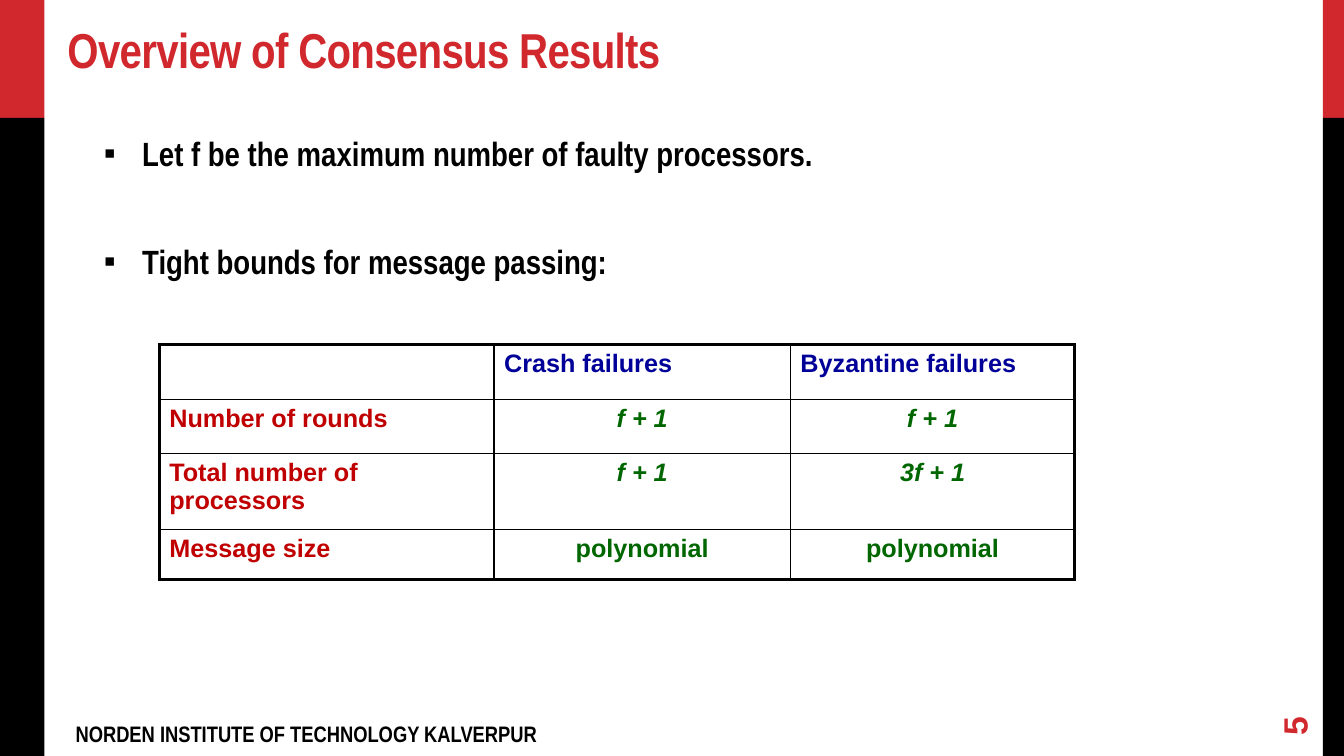
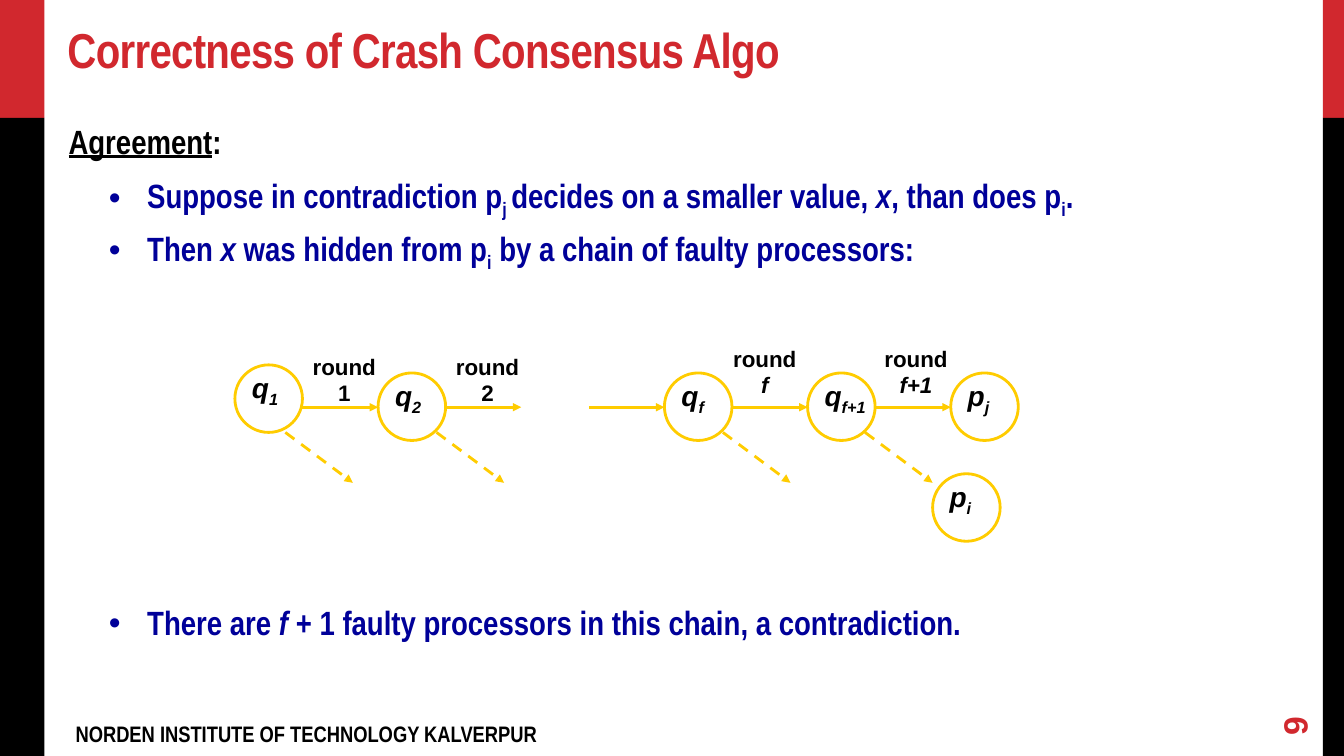
from lxml import etree
from pptx import Presentation
from pptx.dml.color import RGBColor
from pptx.enum.dml import MSO_LINE
from pptx.enum.shapes import MSO_CONNECTOR, MSO_SHAPE
from pptx.enum.text import MSO_ANCHOR, PP_ALIGN
from pptx.oxml.ns import qn
from pptx.util import Inches, Pt

RECTANGLE = MSO_SHAPE.RECTANGLE
OVAL = MSO_SHAPE.OVAL
STRAIGHT = MSO_CONNECTOR.STRAIGHT
DASH = MSO_LINE.DASH
TOP, MIDDLE, BOTTOM = MSO_ANCHOR.TOP, MSO_ANCHOR.MIDDLE, MSO_ANCHOR.BOTTOM
LEFT, CENTER = PP_ALIGN.LEFT, PP_ALIGN.CENTER

RED, BLACK, WHITE = "D1282E", "000000", "FFFFFF"
NAVY, CRIMSON, GREEN, GOLD = "000099", "C00000", "006600", "FFCC00"

FOOTER = "NORDEN INSTITUTE OF TECHNOLOGY KALVERPUR"
WIDE_INSETS = (0.11, 0.06)
PLAIN_INSETS = (0.1, 0.05)

TITLE = {"name": "Arial Narrow", "size": Pt(35), "bold": True, "color": RED, "spc": -50}
BODY = {"name": "Arial Narrow", "size": Pt(24), "bold": True, "color": BLACK}
POINT = {**BODY, "color": NAVY}
FOOT = {**BODY, "size": Pt(16)}
NUMBER = {"name": "Arial", "size": Pt(24), "bold": True, "color": RED}
CELL = {"name": "Arial", "size": Pt(18), "bold": True}
NODE = {"name": "Arial", "size": Pt(20), "bold": True, "italic": True, "color": BLACK}
ROUND = {"name": "Arial", "size": Pt(16), "bold": True, "color": BLACK}
ITALIC = {"italic": True}
SUB = {"baseline": -25000}

CIRCLE = 0.67
STEP = 1.42
CHAIN_LEFT = 2.33
CHAIN_TOP = 3.7
ARROW_Y = 4.04


def rgb(color):
    return RGBColor.from_string(color)


def add_child(parent, tag, **attributes):
    return etree.SubElement(parent, qn(tag), attributes)


def add_span(para, text, style):
    span = para.add_run()
    span.text = text
    for name, value in style.items():
        if name == "color":
            span.font.color.rgb = rgb(value)
        elif name in ("spc", "baseline"):
            span._r.get_or_add_rPr().set(name, str(value))
        else:
            setattr(span.font, name, value)


def fill_para(para, spans, style, align=LEFT, before=0, after=0):
    formats = {"alignment": align, "space_before": Pt(before), "space_after": Pt(after)}
    for name, value in formats.items():
        setattr(para, name, value)
    for text, changes in spans:
        add_span(para, text, {**style, **changes})


def add_bullet(para, symbol, color, margin):
    properties = para._p.get_or_add_pPr()
    properties.set("marL", str(Inches(margin)))
    properties.set("indent", str(Inches(-0.38)))
    add_child(add_child(properties, "a:buClr"), "a:srgbClr", val=color)
    add_child(properties, "a:buFont", typeface="Arial")
    add_child(properties, "a:buChar", char=symbol)


def add_box(page, at, insets=PLAIN_INSETS, anchor=TOP, wrap=True):
    box = page.shapes.add_textbox(*map(Inches, at))
    across, down = map(Inches, insets)
    formats = {
        "margin_left": across, "margin_right": across,
        "margin_top": down, "margin_bottom": down,
        "vertical_anchor": anchor, "word_wrap": wrap,
    }
    for name, value in formats.items():
        setattr(box.text_frame, name, value)
    return box


def add_label(page, at, text, style, **options):
    box = add_box(page, at, **options)
    fill_para(box.text_frame.paragraphs[0], [(text, {})], style)
    return box


def add_body(page, at, items):
    frame = add_box(page, at, WIDE_INSETS).text_frame
    for index, (spans, style, before, after, bullet) in enumerate(items):
        para = frame.add_paragraph() if index else frame.paragraphs[0]
        fill_para(para, spans, style, before=before, after=after)
        if bullet:
            add_bullet(para, *bullet)


def add_band(page, left, top, width, height, color):
    band = page.shapes.add_shape(RECTANGLE, *map(Inches, (left, top, width, height)))
    band.shadow.inherit = False
    band.fill.solid()
    band.fill.fore_color.rgb = rgb(color)
    band.line.fill.background()


def add_page(deck, title, number):
    page = deck.slides.add_slide(deck.slide_layouts[6])
    for left, width in ((13.12, 0.21), (0, 0.44)):
        add_band(page, left, 0, width, 1.17, RED)
        add_band(page, left, 1.17, width, 6.33, BLACK)
    add_label(page, (0.56, 0.17, 12.44, 0.67), title, TITLE,
              insets=WIDE_INSETS, anchor=BOTTOM)
    add_label(page, (0.64, 7.08, 8.11, 0.33), FOOTER, FOOT, insets=WIDE_INSETS)
    box = add_label(page, (12.45, 6.86, 0.77, 0.33), number, NUMBER,
                    insets=WIDE_INSETS, anchor=MIDDLE)
    box.rotation = 270
    return page


def set_borders(cell, outer_sides):
    properties = cell._tc.get_or_add_tcPr()
    for side in "LRTB":
        width = Pt(2.25 if side in outer_sides else 1)
        line = add_child(properties, f"a:ln{side}", w=str(width))
        add_child(add_child(line, "a:solidFill"), "a:srgbClr", val=BLACK)


def add_bounds_table(page, at, rows, widths, heights):
    frame = page.shapes.add_table(len(rows), len(widths), *map(Inches, at))
    table = frame.table
    table.first_row = table.horz_banding = False
    for column, width in zip(table.columns, widths):
        column.width = Inches(width)
    for row, height in zip(table.rows, heights):
        row.height = Inches(height)
    last_row, last_column = len(rows) - 1, len(widths) - 1
    for i, texts in enumerate(rows):
        for j, text in enumerate(texts):
            cell = table.cell(i, j)
            edges = {"L": j == 0, "R": j == last_column, "T": i == 0, "B": i == last_row}
            set_borders(cell, [side for side, outer in edges.items() if outer])
            cell.fill.solid()
            cell.fill.fore_color.rgb = rgb(WHITE)
            color = NAVY if i == 0 else CRIMSON if j == 0 else GREEN
            style = {**CELL, "color": color, "italic": "+" in text}
            align = CENTER if i and j else LEFT
            if text:
                fill_para(cell.text_frame.paragraphs[0], [(text, {})], style, align)


def add_node(page, left, top, letter, index):
    circle = page.shapes.add_shape(OVAL, *map(Inches, (left, top, CIRCLE, CIRCLE)))
    circle.shadow.inherit = False
    circle.fill.background()
    circle.line.color.rgb = rgb(GOLD)
    circle.line.width = Pt(2)
    box = add_box(page, (left + 0.07, top + 0.01, 0.8, 0.44))
    fill_para(box.text_frame.paragraphs[0], [(letter, {}), (index, SUB)], NODE)


def add_arrow(page, start, end, dashed=False):
    arrow = page.shapes.add_connector(STRAIGHT, *map(Inches, (*start, *end)))
    arrow.line.color.rgb = rgb(GOLD)
    arrow.line.width = Pt(2)
    if dashed:
        arrow.line.dash_style = DASH
    add_child(arrow.line._get_or_add_ln(), "a:tailEnd", type="triangle")
    add_child(arrow._element.spPr, "a:effectLst")


def add_round(page, left, top, name, changes):
    frame = add_box(page, (left, top, 0.83, 0.64), wrap=False).text_frame
    fill_para(frame.paragraphs[0], [("round", {})], ROUND, CENTER)
    fill_para(frame.add_paragraph(), [(name, changes)], ROUND, CENTER)


def add_chain(page):
    nodes = [(0, "q", "1"), (1, "q", "2"), (3, "q", "f"), (4, "q", "f+1"), (5, "p", "j")]
    for slot, letter, index in nodes:
        top = CHAIN_TOP if slot else 3.62
        add_node(page, CHAIN_LEFT + slot * STEP, top, letter, index)
    add_node(page, 9.25, 4.7, "p", "i")
    for slot in range(5):
        left = CHAIN_LEFT + CIRCLE + slot * STEP
        add_arrow(page, (left, ARROW_Y), (left + 0.75, ARROW_Y))
    for left in (2.83, 4.33, 7.17, 8.58):
        add_arrow(page, (left, 4.29), (left + 0.67, 4.79), dashed=True)
    rounds = [(3, 3.45, "1", {}), (4.42, 3.45, "2", {}),
              (7.17, 3.37, "f", ITALIC), (8.67, 3.37, "f+1", ITALIC)]
    for left, top, name, changes in rounds:
        add_round(page, left, top, name, changes)


def build_overview(deck):
    page = add_page(deck, "Overview of Consensus Results", "5")
    square = ("▪", BLACK, 0.38)
    add_body(page, (0.92, 1.26, 9.92, 2), [
        ([("Let f be the maximum number of faulty processors.", {})], BODY, 0, 4.9, square),
        ([("Tight bounds for message passing:", {})], BODY, 43.4, 4.9, square),
    ])
    rows = [
        ("", "Crash failures", "Byzantine failures"),
        ("Number of rounds", "f + 1", "f + 1"),
        ("Total number of processors", "f + 1", "3f + 1"),
        ("Message size", "polynomial", "polynomial"),
    ]
    add_bounds_table(page, (1.58, 3.42, 9.08, 2.33), rows,
                     (3.32, 2.94, 2.82), (0.54, 0.54, 0.75, 0.5))


def build_correctness(deck):
    page = add_page(deck, "Correctness of Crash Consensus Algo", "9")
    dot = ("•", NAVY, 0.78)
    suppose = [("Suppose in contradiction p", {}), ("j ", SUB),
               ("decides on a smaller value, ", {}), ("x", ITALIC),
               (", than does p", {}), ("i", SUB), (".", {})]
    hidden = [("Then ", {}), ("x", ITALIC), (" was hidden from p", {}), ("i", SUB),
              (" by a chain of faulty processors:", {})]
    contradiction = [("There are ", {}), ("f ", ITALIC),
                     ("+ 1 faulty processors in this chain, a contradiction.", {})]
    add_body(page, (0.57, 1.14, 12.22, 5.53), [
        ([("Agreement", {"underline": True}), (":", {})], BODY, 0, 4.9, None),
        (suppose, POINT, 4.8, 0, dot),
        (hidden, POINT, 4.8, 0, dot),
        (contradiction, POINT, 235, 0, dot),
    ])
    add_chain(page)


def main():
    deck = Presentation()
    deck.slide_width, deck.slide_height = Inches(13.33), Inches(7.5)
    build_overview(deck)
    build_correctness(deck)
    deck.save("out.pptx")


if __name__ == "__main__":
    main()
